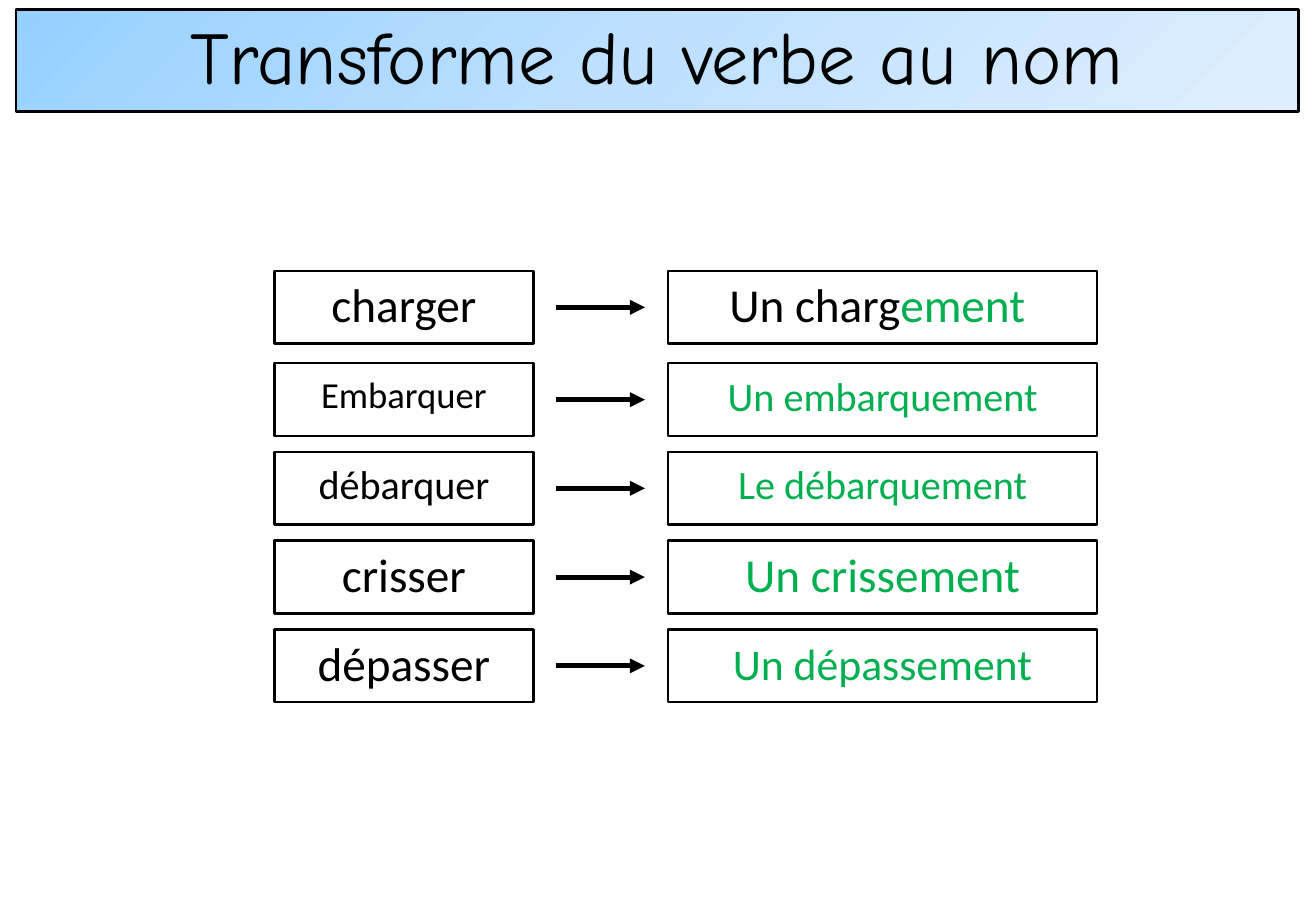
from copy import deepcopy

from lxml.etree import SubElement
from pptx import Presentation
from pptx.dml.color import RGBColor
from pptx.enum.shapes import MSO_CONNECTOR, MSO_SHAPE
from pptx.enum.text import MSO_ANCHOR, PP_ALIGN
from pptx.oxml.ns import qn
from pptx.util import Pt

BLACK = RGBColor(0x00, 0x00, 0x00)
GREEN = RGBColor(0x00, 0xB0, 0x50)
SKY = [
    (0, RGBColor(0x96, 0xD0, 0xFF)),
    (0.5, RGBColor(0xBF, 0xE1, 0xFF)),
    (1, RGBColor(0xE0, 0xEF, 0xFF)),
]

TITLE = "Transforme du verbe au nom"
PAIRS = [
    (("charger", 28, 0.9), ([("Un charg", BLACK), ("ement ", GREEN)], 28, 0.9)),
    (("Embarquer", 21.7, 0.7), ([("Un embarquement", GREEN)], 23.8, 0.8)),
    (("débarquer", 23.8, 0.8), ([("Le débarquement", GREEN)], 23.8, 0.8)),
    (("crisser", 28, 0.9), ([("Un crissement", GREEN)], 28, 0.9)),
    (("dépasser", 28, 0.9), ([("Un dépassement", GREEN)], 25.9, 0.9)),
]

VERB_LEFT, VERB_WIDTH = 162.7, 153.4
NOUN_LEFT, NOUN_WIDTH = 396, 254.2
ARROW_LEFT, ARROW_RIGHT = 329.8, 382.3
ROW_HEIGHT = 43.2
FIRST_TOP, ROW_STEP, EXAMPLE_GAP = 160.6, 52.6, 2.1

prs = Presentation()
prs.slide_width, prs.slide_height = Pt(780), Pt(540)
slide = prs.slides.add_slide(prs.slide_layouts[6])


def add_box(runs, left, top, width, height, size, spacing, before=10, font="Calibri"):
    box = slide.shapes.add_shape(
        MSO_SHAPE.RECTANGLE, Pt(left), Pt(top), Pt(width), Pt(height))
    box.shadow.inherit = False
    box.fill.background()
    box.line.color.rgb = BLACK
    box.line.width = Pt(1.5)
    frame = box.text_frame
    frame.word_wrap = True
    frame.vertical_anchor = MSO_ANCHOR.MIDDLE
    paragraph = frame.paragraphs[0]
    paragraph.alignment = PP_ALIGN.CENTER
    paragraph.line_spacing = spacing
    paragraph.space_before = Pt(before)
    for text, color in runs:
        run = paragraph.add_run()
        run.text = text
        run.font.name = font
        run.font.size = Pt(size)
        run.font.color.rgb = color
    return box


def add_arrow(middle):
    arrow = slide.shapes.add_connector(
        MSO_CONNECTOR.STRAIGHT, Pt(ARROW_LEFT), Pt(middle), Pt(ARROW_RIGHT), Pt(middle))
    arrow.line.color.rgb = BLACK
    arrow.line.width = Pt(3)
    SubElement(arrow.line._get_or_add_ln(), qn("a:tailEnd"), type="triangle")
    SubElement(arrow._element.spPr, qn("a:effectLst"))


banner = add_box([(TITLE, BLACK)], 9.4, 5.8, 760.3, 60.5, 44, 0.9, before=0, font="Comic Neue")
banner.fill.gradient()
banner.fill.gradient_angle = 315
stop_list = banner._element.spPr.find(qn("a:gradFill")).find(qn("a:gsLst"))
stop_list.append(deepcopy(stop_list[0]))
for stop, (position, color) in zip(banner.fill.gradient_stops, SKY):
    stop.position = position
    stop.color.rgb = color

for row, ((verb, verb_size, verb_spacing), (noun, noun_size, noun_spacing)) in enumerate(PAIRS):
    top = FIRST_TOP + row * ROW_STEP + (EXAMPLE_GAP if row else 0)
    add_box([(verb, BLACK)], VERB_LEFT, top, VERB_WIDTH, ROW_HEIGHT, verb_size, verb_spacing)
    add_arrow(top + ROW_HEIGHT / 2)
    add_box(noun, NOUN_LEFT, top, NOUN_WIDTH, ROW_HEIGHT, noun_size, noun_spacing)

prs.save("out.pptx")
